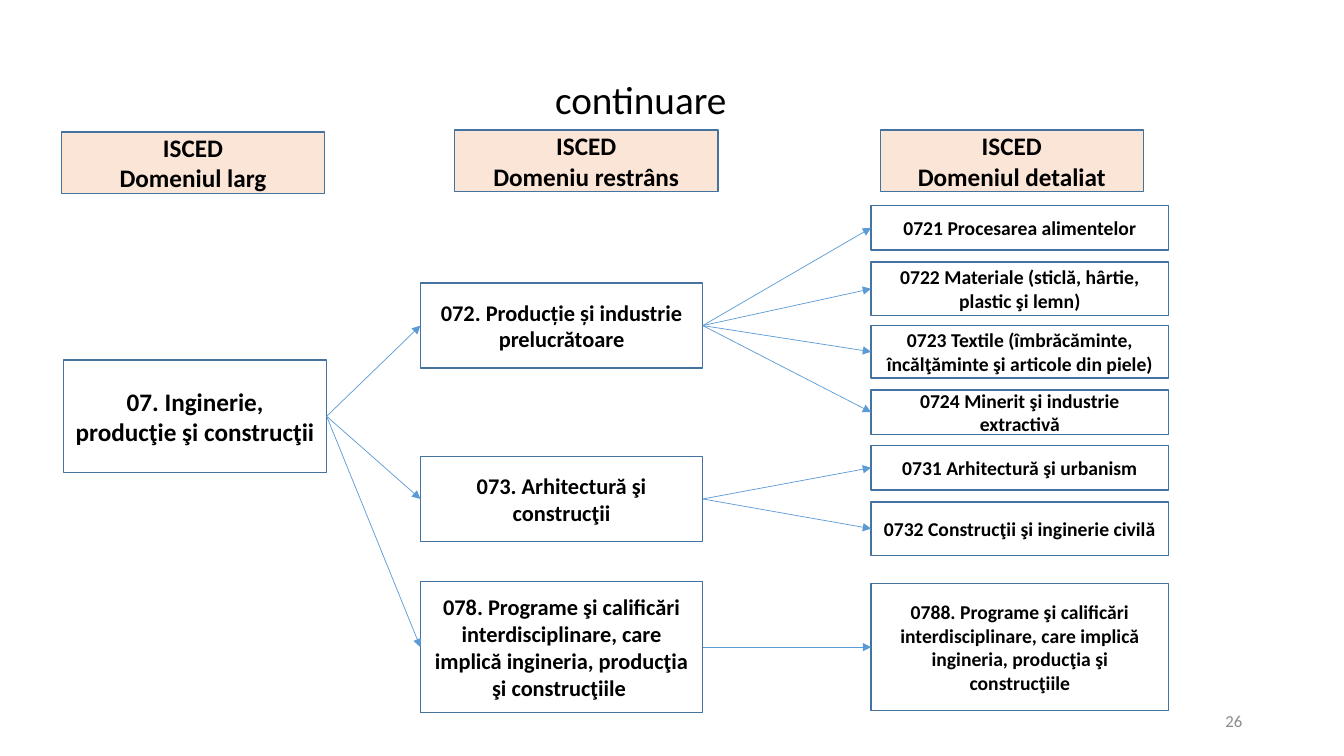
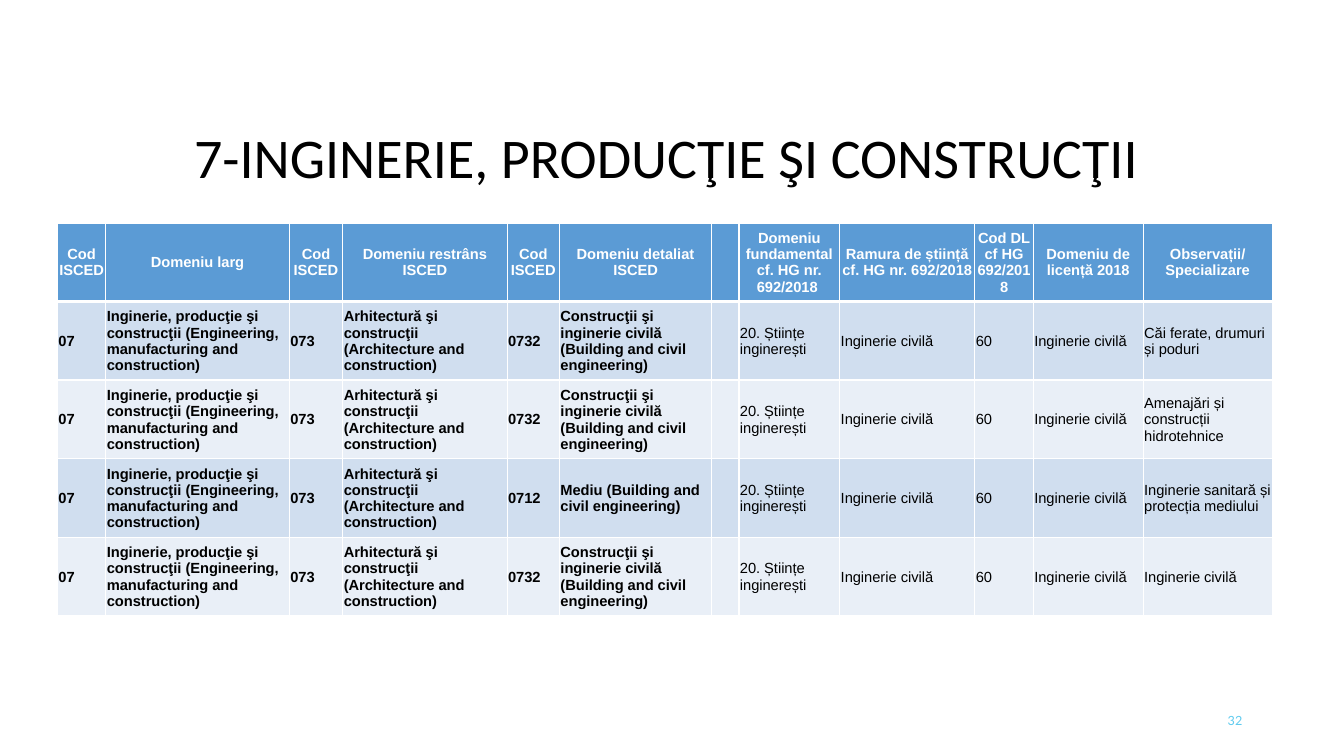
import dataclasses

import lxml.etree
import pptx
import pptx.dml.color
import pptx.enum.shapes
import pptx.enum.text
import pptx.oxml
import pptx.oxml.ns
import pptx.util

Inches = pptx.util.Inches
Pt = pptx.util.Pt
ALIGN = pptx.enum.text.PP_ALIGN
MIDDLE = pptx.enum.text.MSO_ANCHOR.MIDDLE
LEFT_SITE, RIGHT_SITE = 1, 3


@dataclasses.dataclass(frozen=True)
class Theme:
    font: str = "Calibri"
    table_font: str = "Arial"
    number_font: str = "Lato"
    text: str = "000000"
    white: str = "FFFFFF"
    outline: str = "43739E"
    accent: str = "5B9BD5"
    heading_fill: str = "FBE5D6"
    bands: tuple = ("D0DEEF", "E9EFF7")
    gray: str = "8C8C8C"
    cyan: str = "5FCBEF"
    small_title: float = 28
    large_title: float = 40
    broad: float = 18
    narrow: float = 16
    detailed: float = 14
    table: float = 10.5
    number: float = 12
    small_number: float = 9


THEME = Theme()
NUMBER_BOX = (9.42, 6.95, 3, 0.4)

# Column headings: text and box
HEADINGS = [
    ("Domeniul larg", (0.61, 1.31, 2.61, 0.61)),
    ("Domeniu restrâns", (4.51, 1.29, 2.61, 0.61)),
    ("Domeniul detaliat", (8.73, 1.29, 2.61, 0.61)),
]
BROAD_FIELD = ("07. Inginerie, producţie şi construcţii ", 3.57, 1.12)
# Each field: text, top, height; a narrow field also lists its detailed fields
NARROW_FIELDS = [
    ("072. Producție și industrie prelucrătoare", 2.81, 0.84, [
        ("0721 Procesarea alimentelor", 2.04, 0.44),
        ("0722 Materiale (sticlă, hârtie, plastic şi lemn)", 2.6, 0.53),
        ("0723 Textile (îmbrăcăminte, încălţăminte şi articole din piele)", 3.23, 0.52),
        ("0724 Minerit şi industrie extractivă", 3.87, 0.44),
    ]),
    ("073. Arhitectură şi construcţii", 4.53, 0.84, [
        ("0731 Arhitectură şi urbanism", 4.42, 0.44),
        ("0732 Construcţii şi inginerie civilă", 4.98, 0.53),
    ]),
    ("078. Programe şi calificări interdisciplinare, care implică ingineria, "
     "producţia şi construcţiile ", 5.77, 1.3, [
        ("0788. Programe şi calificări interdisciplinare, care implică ingineria, "
         "producţia şi construcţiile", 5.79, 1.26),
    ]),
]

# Table columns: heading and width
COLUMNS = [
    ("Cod ISCED", 0.48), ("Domeniu larg", 1.82),
    ("Cod ISCED", 0.53), ("Domeniu restrâns ISCED", 1.63),
    ("Cod ISCED", 0.52), ("Domeniu detaliat ISCED", 1.51),
    ("", 0.27), ("Domeniu fundamental cf. HG nr. 692/2018 ", 1),
    ("Ramura de știință cf. HG nr. 692/2018", 1.34),
    ("Cod DL cf HG 692/2018", 0.58), ("Domeniu de licență 2018", 1.09),
    ("Observații/ Specializare", 1.28),
]
BOLD_COLUMNS = 6
CIVIL = ("0732", "Construcţii şi inginerie civilă (Building and civil engineering)")
ENVIRONMENT = ("0712", "Mediu (Building and civil engineering)")
SPECIALIZATIONS = [
    (CIVIL, "Căi ferate, drumuri și poduri"),
    (CIVIL, "Amenajări și construcții hidrotehnice"),
    (ENVIRONMENT, "Inginerie sanitară și protecția mediului"),
    (CIVIL, "Inginerie civilă"),
]


def rgb(color):
    return pptx.dml.color.RGBColor.from_string(color)


def fill_solid(item, color):
    item.fill.solid()
    item.fill.fore_color.rgb = rgb(color)


def write(frame, lines, size, color=THEME.text, font=THEME.font, bold=False,
          align=ALIGN.CENTER, spacing=None):
    """Write one paragraph per line, all in the same style."""
    frame.word_wrap = True
    for index, line in enumerate(lines):
        paragraph = frame.add_paragraph() if index else frame.paragraphs[0]
        paragraph.alignment = align
        if spacing:
            paragraph.line_spacing = spacing
        run = paragraph.add_run()
        run.text = line
        run.font.name = font
        run.font.size = Pt(size)
        run.font.bold = bold
        run.font.color.rgb = rgb(color)


def add_text(slide, box, text, size, **style):
    frame = slide.shapes.add_textbox(*map(Inches, box)).text_frame
    frame.vertical_anchor = MIDDLE
    write(frame, [text], size, **style)


def add_title(slide, box, text, size):
    add_text(slide, box, text, size, spacing=0.9)


def add_number(slide, text, size, color, font):
    add_text(slide, NUMBER_BOX, text, size, color=color, font=font, align=ALIGN.RIGHT)


def add_field(slide, box, lines, size, fill=None):
    shape = slide.shapes.add_shape(
        pptx.enum.shapes.MSO_SHAPE.RECTANGLE, *map(Inches, box))
    shape.shadow.inherit = False
    if fill:
        fill_solid(shape, fill)
    else:
        shape.fill.background()
    shape.line.color.rgb = rgb(THEME.outline)
    shape.line.width = Pt(1)
    shape.text_frame.vertical_anchor = MIDDLE
    write(shape.text_frame, lines, size, bold=True)
    return shape


def add_arrow(slide, source, target):
    """Join the right side of one field to the left side of another."""
    arrow = slide.shapes.add_connector(
        pptx.enum.shapes.MSO_CONNECTOR.STRAIGHT, 0, 0, 0, 0)
    arrow.begin_connect(source, RIGHT_SITE)
    arrow.end_connect(target, LEFT_SITE)
    arrow.line.color.rgb = rgb(THEME.accent)
    arrow.line.width = Pt(0.5)
    qualified = pptx.oxml.ns.qn
    line = arrow.line._get_or_add_ln()
    lxml.etree.SubElement(line, qualified("a:tailEnd"), type="triangle")
    lxml.etree.SubElement(arrow._element.spPr, qualified("a:effectLst"))


def add_field_tree(slide, broad_column, narrow_column, detailed_column):
    """Draw the three levels of fields; each column is a left and a width."""
    def place(column, field, size):
        text, top, height = field
        left, width = column
        return add_field(slide, (left, top, width, height), [text], size)

    broad = place(broad_column, BROAD_FIELD, THEME.broad)
    for *field, details in NARROW_FIELDS:
        narrow = place(narrow_column, field, THEME.narrow)
        add_arrow(slide, broad, narrow)
        for detail in details:
            add_arrow(slide, narrow, place(detailed_column, detail, THEME.detailed))


def set_borders(cell, top=1, bottom=1):
    """Add white borders; call before the fill is set."""
    properties = cell._tc.get_or_add_tcPr()
    for side, points in (("L", 1), ("R", 1), ("T", top), ("B", bottom)):
        properties.append(pptx.oxml.parse_xml(
            f'<a:ln{side} {pptx.oxml.ns.nsdecls("a")} w="{Pt(points)}">'
            f'<a:solidFill><a:srgbClr val="{THEME.white}"/></a:solidFill>'
            f'</a:ln{side}>'))


def body_row(detailed, specialization):
    return ["07", "Inginerie, producţie şi construcţii "
            "(Engineering, manufacturing and construction)",
            "073", "Arhitectură şi construcţii (Architecture and construction)",
            *detailed, "", "20. Științe inginerești", "Inginerie civilă", "60",
            "Inginerie civilă", specialization]


def fill_cell(cell, text, fill, margin, borders, **style):
    set_borders(cell, **borders)
    fill_solid(cell, fill)
    cell.vertical_anchor = MIDDLE
    cell.margin_left = cell.margin_right = cell.margin_top = Inches(margin)
    cell.margin_bottom = 0
    if text:
        write(cell.text_frame, [text], THEME.table, font=THEME.table_font, **style)


def add_field_table(slide, left, top, header_height, row_height):
    rows = [body_row(*entry) for entry in SPECIALIZATIONS]
    width = sum(column_width for _, column_width in COLUMNS)
    height = header_height + row_height * len(rows)
    table = slide.shapes.add_table(
        len(rows) + 1, len(COLUMNS), *map(Inches, (left, top, width, height))).table
    for index, (heading, column_width) in enumerate(COLUMNS):
        table.columns[index].width = Inches(column_width)
        fill_cell(table.cell(0, index), heading, THEME.accent, 0, {"bottom": 3},
                  color=THEME.white, bold=True)
    table.rows[0].height = Inches(header_height)
    for row_index, row in enumerate(rows, start=1):
        table.rows[row_index].height = Inches(row_height)
        band = THEME.bands[(row_index - 1) % 2]
        borders = {"top": 3 if row_index == 1 else 1}
        for index, text in enumerate(row):
            fill_cell(table.cell(row_index, index), text, band, 0.01, borders,
                      bold=index < BOLD_COLUMNS, align=ALIGN.LEFT)


def add_tree_slide(slide):
    add_title(slide, (0.61, 0.81, 11.49, 0.4), "continuare", THEME.small_title)
    add_number(slide, "26", THEME.number, THEME.gray, THEME.font)
    for text, box in HEADINGS:
        add_field(slide, box, ["ISCED", text], THEME.broad, THEME.heading_fill)
    add_field_tree(slide, (0.63, 2.61), (4.17, 2.8), (8.64, 2.95))


def add_table_slide(slide):
    add_title(slide, (0.92, 1.23, 11.5, 0.72),
              "7-INGINERIE, PRODUCŢIE ŞI CONSTRUCŢII ", THEME.large_title)
    add_field_table(slide, 0.57, 2.22, 0.77, 0.78)
    add_number(slide, "32", THEME.small_number, THEME.cyan, THEME.number_font)


def main():
    presentation = pptx.Presentation()
    presentation.slide_width = Inches(13.33)
    presentation.slide_height = Inches(7.5)
    blank = presentation.slide_layouts[6]
    for build in (add_tree_slide, add_table_slide):
        build(presentation.slides.add_slide(blank))
    presentation.save("out.pptx")


if __name__ == "__main__":
    main()
